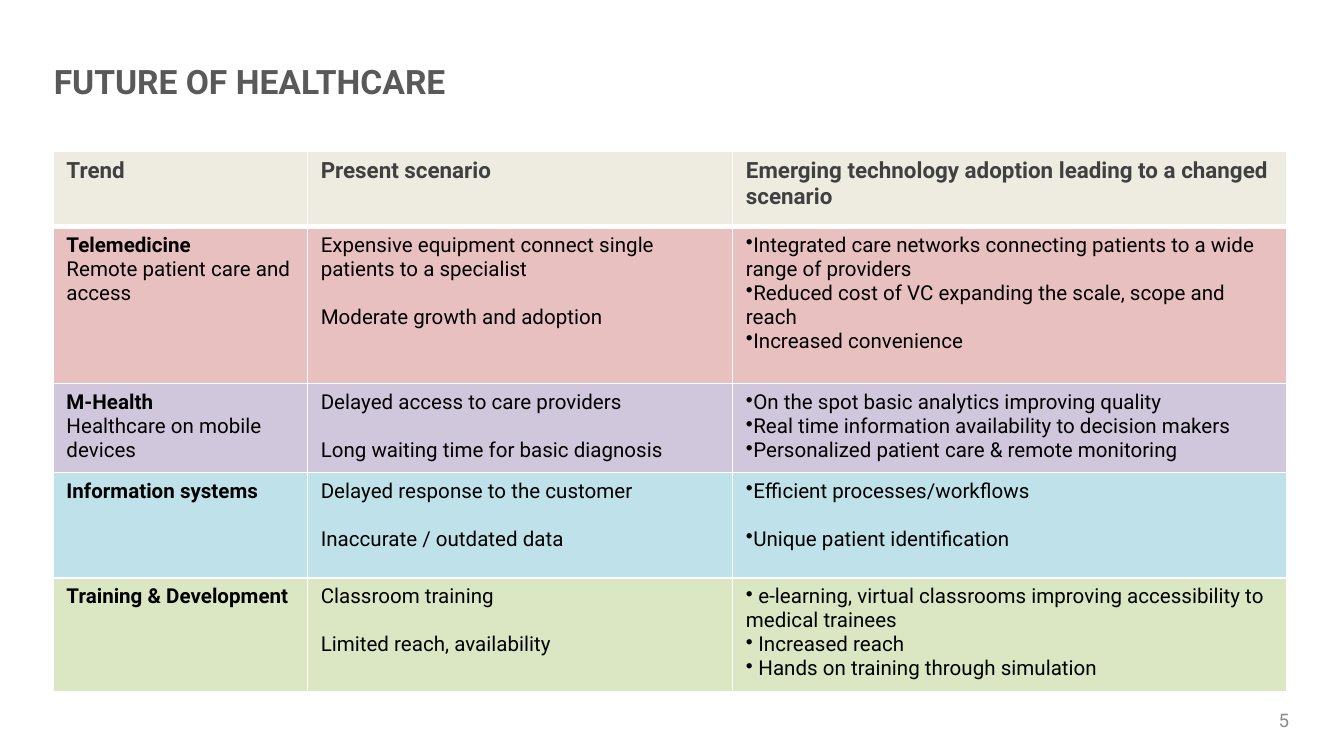
from dataclasses import dataclass

from lxml.etree import SubElement
from pptx import Presentation
from pptx.dml.color import RGBColor
from pptx.enum.text import MSO_ANCHOR, MSO_AUTO_SIZE, PP_ALIGN
from pptx.oxml.ns import qn
from pptx.util import Pt


@dataclass(frozen=True)
class Theme:
    font: str = "Roboto"
    title_size: float = 18
    header_size: float = 12
    body_size: float = 11
    number_size: float = 10
    body_line: float = 12.9
    title_color: str = "595959"
    header_color: str = "404040"
    body_color: str = "000000"
    number_color: str = "8C8C8C"
    header_fill: str = "EEECE1"
    border: str = "FFFFFF"
    thin: float = 1
    thick: float = 3


@dataclass(frozen=True)
class Line:
    text: str
    bold: bool = False
    bullet: bool = False
    gap: bool = False


@dataclass(frozen=True)
class Trend:
    fill: str
    height: float
    name: str
    summary: str
    present: tuple[str, str]
    emerging: tuple[str, ...]
    spaced: bool = False

    def cells(self) -> list[list[Line]]:
        label = [Line(self.name, bold=True)]
        if self.summary:
            label.append(Line(self.summary))
        present = [Line(text, gap=index > 0) for index, text in enumerate(self.present)]
        emerging = [
            Line(text, bullet=True, gap=self.spaced and index > 0)
            for index, text in enumerate(self.emerging)
        ]
        return [label, present, emerging]


THEME = Theme()
COLUMN_WIDTHS = (136.25, 227.8, 296.9)
HEADER_HEIGHT = 40.5
HEADERS = (
    "Trend",
    "Present scenario",
    "Emerging technology adoption leading to a changed scenario",
)
TRENDS = (
    Trend(
        "E8C0BF", 84.2, "Telemedicine", "Remote patient care and access",
        ("Expensive equipment connect single patients to a specialist",
         "Moderate growth and adoption"),
        ("Integrated care networks connecting patients to a wide range of providers",
         "Reduced cost of VC expanding the scale, scope and reach",
         "Increased convenience"),
    ),
    Trend(
        "D1C7DD", 47.6, "M-Health", "Healthcare on mobile devices",
        ("Delayed access to care providers", "Long waiting time for basic diagnosis"),
        ("On the spot basic analytics improving quality",
         "Real time information availability to decision makers",
         "Personalized patient care & remote monitoring"),
    ),
    Trend(
        "BEE1EA", 56.7, "Information systems", "",
        ("Delayed response to the customer", "Inaccurate / outdated data"),
        ("Efficient processes/workflows", "Unique patient identification"),
        spaced=True,
    ),
    Trend(
        "DBE6C3", 61, "Training & Development", "",
        ("Classroom training", "Limited reach, availability"),
        (" e-learning, virtual classrooms improving accessibility to medical trainees",
         " Increased reach",
         " Hands on training through simulation"),
    ),
)


def add_span(para, text: str, size: float, color: str, bold: bool = False) -> None:
    span = para.add_run()
    span.text = text
    span.font.name = THEME.font
    span.font.size = Pt(size)
    span.font.bold = bold
    span.font.color.rgb = RGBColor.from_string(color)


def add_bullet(para) -> None:
    properties = para._p.get_or_add_pPr()
    properties.set("marL", "0")
    properties.set("indent", "0")
    SubElement(properties, qn("a:buChar"), char="•")


def style_cell(cell, fill: str, top: float, bottom: float) -> None:
    properties = cell._tc.get_or_add_tcPr()
    widths = {"lnL": THEME.thin, "lnR": THEME.thin, "lnT": top, "lnB": bottom}
    for side, width in widths.items():
        edge = SubElement(properties, qn(f"a:{side}"), w=str(Pt(width)))
        paint = SubElement(edge, qn("a:solidFill"))
        SubElement(paint, qn("a:srgbClr"), val=THEME.border)
    cell.fill.solid()
    cell.fill.fore_color.rgb = RGBColor.from_string(fill)


def write_cell(cell, lines: list[Line], size: float, color: str) -> None:
    frame = cell.text_frame
    for index, line in enumerate(lines):
        para = frame.add_paragraph() if index else frame.paragraphs[0]
        if line.gap:
            para.space_before = Pt(THEME.body_line)
        if line.bullet:
            add_bullet(para)
        add_span(para, line.text, size, color, line.bold)


def add_title(page) -> None:
    title = page.shapes.title
    title.left, title.top, title.width, title.height = Pt(28.8), Pt(28.8), Pt(593.3), Pt(28.8)
    frame = title.text_frame
    frame.word_wrap = True
    frame.auto_size = MSO_AUTO_SIZE.SHAPE_TO_FIT_TEXT
    frame.vertical_anchor = MSO_ANCHOR.MIDDLE
    frame.margin_left = Pt(0)
    para = frame.paragraphs[0]
    para.alignment = PP_ALIGN.LEFT
    add_span(para, "FUTURE OF HEALTHCARE", THEME.title_size, THEME.title_color, True)


def add_trend_table(page) -> None:
    heights = [HEADER_HEIGHT] + [trend.height for trend in TRENDS]
    table = page.shapes.add_table(
        len(heights), len(COLUMN_WIDTHS), Pt(28.4), Pt(80.8),
        Pt(sum(COLUMN_WIDTHS)), Pt(sum(heights)),
    ).table
    table.first_row = False
    table.horz_banding = False
    for column, width in zip(table.columns, COLUMN_WIDTHS):
        column.width = Pt(width)
    for row, height in zip(table.rows, heights):
        row.height = Pt(height)

    for column, text in enumerate(HEADERS):
        cell = table.cell(0, column)
        style_cell(cell, THEME.header_fill, THEME.thin, THEME.thick)
        write_cell(cell, [Line(text, bold=True)], THEME.header_size, THEME.header_color)
    for row, trend in enumerate(TRENDS, start=1):
        top = THEME.thick if row == 1 else THEME.thin
        for column, lines in enumerate(trend.cells()):
            cell = table.cell(row, column)
            style_cell(cell, trend.fill, top, THEME.thin)
            write_cell(cell, lines, THEME.body_size, THEME.body_color)


def add_page_number(page) -> None:
    box = page.shapes.add_textbox(Pt(652.3), Pt(375.1), Pt(38.2), Pt(21.6))
    frame = box.text_frame
    frame.word_wrap = True
    frame.vertical_anchor = MSO_ANCHOR.MIDDLE
    frame.margin_right = Pt(0)
    para = frame.paragraphs[0]
    para.alignment = PP_ALIGN.RIGHT
    add_span(para, "5", THEME.number_size, THEME.number_color)


def main() -> None:
    deck = Presentation()
    deck.slide_width, deck.slide_height = Pt(720), Pt(405)
    page = deck.slides.add_slide(deck.slide_layouts.get_by_name("Title Only"))
    add_title(page)
    add_trend_table(page)
    add_page_number(page)
    deck.save("out.pptx")


if __name__ == "__main__":
    main()
